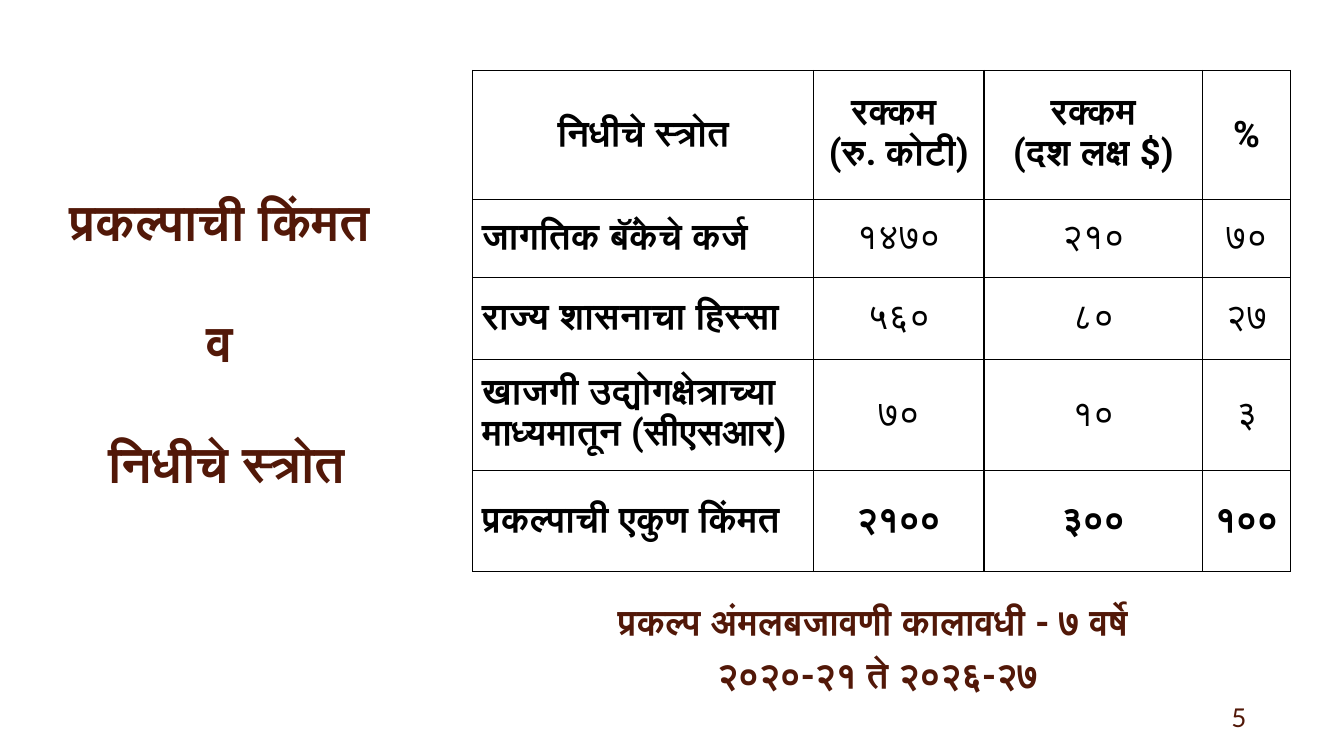
"""Build the slide on project cost and its sources of funds."""
from dataclasses import dataclass

from lxml import etree
from pptx import Presentation
from pptx.dml.color import RGBColor
from pptx.enum.text import MSO_ANCHOR, PP_ALIGN
from pptx.oxml.ns import qn
from pptx.util import Inches, Pt

LEFT, CENTER, RIGHT = PP_ALIGN.LEFT, PP_ALIGN.CENTER, PP_ALIGN.RIGHT
TOP, MIDDLE = MSO_ANCHOR.TOP, MSO_ANCHOR.MIDDLE

HEADING = ["प्रकल्पाची किंमत ", "व ", "निधीचे स्त्रोत"]
PERIOD = ["प्रकल्प अंमलबजावणी कालावधी - ७ वर्षे ", "२०२०-२१ ते २०२६-२७"]
PAGE_NUMBER = "5"
FUNDS = [
    (["निधीचे स्त्रोत"], ["रक्कम ", "(रु. कोटी)"], ["रक्कम", "(दश लक्ष $)"], ["%"]),
    (["जागतिक बॅंकेचे कर्ज"], ["१४७०"], ["२१०"], ["७०"]),
    (["राज्य शासनाचा हिस्सा"], ["५६०"], ["८०"], ["२७"]),
    (["खाजगी उद्योगक्षेत्राच्या माध्यमातून (सीएसआर)"], ["७०"], ["१०"], ["३"]),
    (["प्रकल्पाची एकुण किंमत"], ["२१००"], ["३००"], ["१००"]),
]
COLUMN_WIDTHS = [3.38, 1.69, 2.17, 0.87]
ROW_HEIGHTS = [1.28, 0.77, 0.82, 1.1, 1]


@dataclass(frozen=True)
class Theme:
    """Colours, fonts and type sizes."""
    brown: str = "521808"
    black: str = "000000"
    white: str = "FFFFFF"
    font: str = "Roboto"
    number_font: str = "Lato"
    heading: float = 36
    period: float = 25.9
    table: float = 26
    number: float = 18.5
    border: float = 1


THEME = Theme()


def add_run(paragraph, text, size, color, bold, font=THEME.font):
    """Add one styled run."""
    run = paragraph.add_run()
    run.text = text
    run.font.size = Pt(size)
    run.font.name = font
    run.font.bold = bold
    run.font.color.rgb = RGBColor.from_string(color)


def add_frame(slide, box, anchor):
    """Add a wrapping text box and return its text frame."""
    frame = slide.shapes.add_textbox(*map(Inches, box)).text_frame
    frame.word_wrap = True
    frame.vertical_anchor = anchor
    return frame


def add_paragraph(frame, index, align):
    """Return the paragraph at index, adding it after the first."""
    paragraph = frame.add_paragraph() if index else frame.paragraphs[0]
    paragraph.alignment = align
    return paragraph


def add_borders(cell):
    """Draw a line on all four sides of a cell."""
    properties = cell._tc.get_or_add_tcPr()
    for side in ("a:lnL", "a:lnR", "a:lnT", "a:lnB"):
        line = etree.SubElement(properties, qn(side), w=str(Pt(THEME.border)))
        fill = etree.SubElement(line, qn("a:solidFill"))
        etree.SubElement(fill, qn("a:srgbClr"), val=THEME.black)


def add_heading(slide):
    """Add the heading on the left."""
    frame = add_frame(slide, (0.37, 0.7, 3.76, 4.78), MIDDLE)
    paragraph = add_paragraph(frame, 0, CENTER)
    paragraph.line_spacing = 2.0
    for index, line in enumerate(HEADING):
        if index:
            paragraph.add_line_break()
        add_run(paragraph, line, THEME.heading, THEME.brown, True)


def add_period(slide):
    """Add the project period under the table."""
    frame = add_frame(slide, (5.38, 5.94, 6.65, 1.08), TOP)
    for index, line in enumerate(PERIOD):
        paragraph = add_paragraph(frame, index, CENTER)
        paragraph.line_spacing = 0.9
        paragraph.space_before = Pt(10)
        add_run(paragraph, line, THEME.period, THEME.brown, True)


def add_page_number(slide):
    """Add the page number at the lower right."""
    frame = add_frame(slide, (11.57, 6.92, 0.89, 0.38), MIDDLE)
    paragraph = add_paragraph(frame, 0, RIGHT)
    paragraph.space_after = Pt(6)
    add_run(paragraph, PAGE_NUMBER, THEME.number, THEME.brown, False, THEME.number_font)


def add_funds(slide):
    """Add the table of fund sources."""
    box = (4.69, 0.7, sum(COLUMN_WIDTHS), sum(ROW_HEIGHTS))
    funds = slide.shapes.add_table(len(FUNDS), len(COLUMN_WIDTHS), *map(Inches, box)).table
    funds.first_row = funds.horz_banding = False
    for column, width in zip(funds.columns, COLUMN_WIDTHS):
        column.width = Inches(width)
    last = len(FUNDS) - 1
    for row, entries in enumerate(FUNDS):
        funds.rows[row].height = Inches(ROW_HEIGHTS[row])
        for col, lines in enumerate(entries):
            cell = funds.cell(row, col)
            cell.vertical_anchor = MIDDLE
            cell.margin_left = cell.margin_right = Inches(0.09)
            cell.margin_top = cell.margin_bottom = Inches(0.04)
            add_borders(cell)
            cell.fill.background()
            align = LEFT if row and not col else CENTER
            bold = row in (0, last) or col == 0
            for index, line in enumerate(lines):
                paragraph = add_paragraph(cell.text_frame, index, align)
                add_run(paragraph, line, THEME.table, THEME.black, bold)


def main():
    """Build and save the presentation."""
    deck = Presentation()
    deck.slide_width, deck.slide_height = Inches(13.33), Inches(7.5)
    slide = deck.slides.add_slide(deck.slide_layouts[6])
    slide.background.fill.solid()
    slide.background.fill.fore_color.rgb = RGBColor.from_string(THEME.white)
    add_heading(slide)
    add_period(slide)
    add_page_number(slide)
    add_funds(slide)
    deck.save("out.pptx")


if __name__ == "__main__":
    main()
